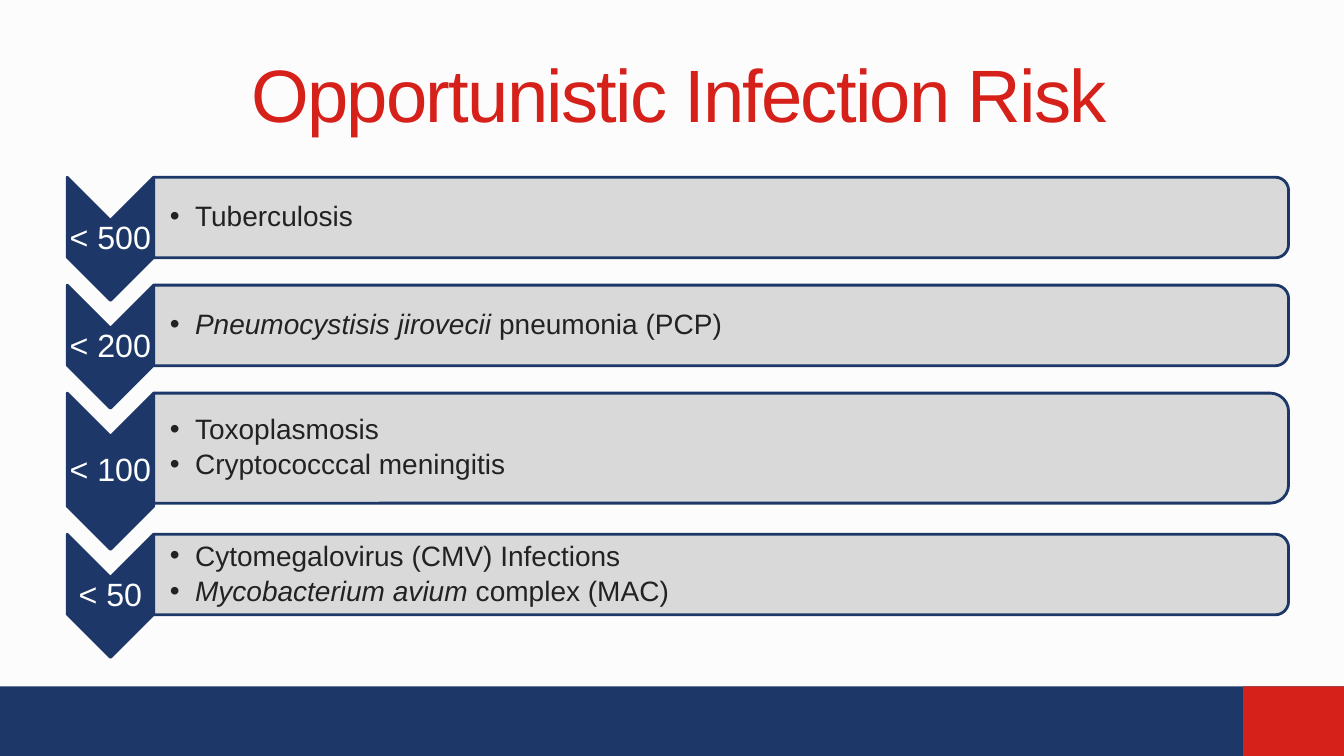
from lxml.etree import SubElement
from pptx import Presentation
from pptx.dml.color import RGBColor
from pptx.enum.shapes import MSO_SHAPE
from pptx.enum.text import MSO_ANCHOR, PP_ALIGN
from pptx.oxml.ns import qn
from pptx.util import Emu, Inches, Pt

COLORS = {
    "page": "FCFCFC",
    "navy": "1C3768",
    "red": "D6201A",
    "gray": "D6D6D6",
    "ink": "222222",
    "white": "FFFFFF",
}
COLUMNS, ROWS = 160, 90

# CD4 threshold, infections (*italic*), bar rows, chevron rows
RISKS = [
    ("< 500", ["Tuberculosis"], 9.6, 14.65),
    ("< 200", ["*Pneumocystisis jirovecii *pneumonia (PCP)"], 9.6, 14.65),
    ("< 100", ["Toxoplasmosis", "Cryptococccal meningitis"], 13.1, 18.6),
    ("< 50", ["Cytomegalovirus (CMV) Infections",
              "*Mycobacterium avium *complex (MAC)"], 9.6, 14.65),
]
LIST_TOP, OVERLAP = 21.1, 1.8
CHEVRON_LEFT, CHEVRON_WIDTH = 8, 10.3
BAR_LEFT, BAR_WIDTH = CHEVRON_LEFT + CHEVRON_WIDTH, 135.1


def rgb(name):
    return RGBColor.from_string(COLORS[name])


class Deck:
    """Holds the style and the slide; lengths are grid columns and rows."""

    font = "Arial"

    def __init__(self):
        self.file = Presentation()
        self.file.slide_width = Inches(13.33)
        self.file.slide_height = Inches(7.5)
        self.slide = self.file.slides.add_slide(self.file.slide_layouts[6])
        background = self.slide.background.fill
        background.solid()
        background.fore_color.rgb = rgb("page")

    def place(self, left, top, width, height):
        column = self.file.slide_width / COLUMNS
        row = self.file.slide_height / ROWS
        return [Emu(round(n)) for n in
                (left * column, top * row, width * column, height * row)]

    def block(self, preset, left, top, width, height, fill, line=None, opacity=None):
        return self.draw(preset, self.place(left, top, width, height), fill, line, opacity)

    def turned(self, preset, left, top, width, height, fill, line=None, opacity=None):
        """Draw a preset turned a quarter clockwise that covers the given area."""
        x, y, w, h = self.place(left, top, width, height)
        frame = [x + (w - h) // 2, y + (h - w) // 2, h, w]
        shape = self.draw(preset, frame, fill, line, opacity)
        shape.rotation = 90
        return shape

    def draw(self, preset, frame, fill, line, opacity):
        shape = self.slide.shapes.add_shape(preset, *frame)
        shape.shadow.inherit = False
        shape.fill.solid()
        shape.fill.fore_color.rgb = rgb(fill)
        if opacity:
            color = shape.fill._xPr.find(qn("a:solidFill"))[0]
            SubElement(color, qn("a:alpha"), val=str(opacity * 1000))
        if line:
            shape.line.color.rgb = rgb(line)
            shape.line.width = Pt(2)
        else:
            shape.line.fill.background()
        return shape

    def text(self, lines, left, top, width, height, *, size, color,
             align=PP_ALIGN.LEFT, insets=(0.1, 0.05, 0.1, 0.05),
             leading=0.9, after=0, bullet=False, tracking=0):
        """Add lines of text; parts between asterisks are italic."""
        box = self.slide.shapes.add_textbox(*self.place(left, top, width, height))
        frame = box.text_frame
        frame.word_wrap = True
        frame.vertical_anchor = MSO_ANCHOR.MIDDLE
        (frame.margin_left, frame.margin_top,
         frame.margin_right, frame.margin_bottom) = map(Inches, insets)
        for index, line in enumerate(lines):
            paragraph = frame.paragraphs[0] if index == 0 else frame.add_paragraph()
            paragraph.alignment = align
            paragraph.line_spacing = leading
            paragraph.space_after = Pt(after)
            if bullet:
                props = paragraph._p.get_or_add_pPr()
                props.set("marL", str(Inches(0.25)))
                props.set("indent", str(-Inches(0.25)))
                SubElement(props, qn("a:buFont"), typeface=self.font)
                SubElement(props, qn("a:buChar"), char="•")
            for part, words in enumerate(line.split("*")):
                if not words:
                    continue
                run = paragraph.add_run()
                run.text = words
                run.font.name = self.font
                run.font.size = Pt(size)
                run.font.color.rgb = rgb(color)
                run.font.italic = part % 2 == 1
                if tracking:
                    run.font._element.set("spc", str(round(tracking * 100)))


def main():
    deck = Deck()
    deck.block(MSO_SHAPE.RECTANGLE, 0, 81.7, COLUMNS, 8.3, "navy")
    deck.block(MSO_SHAPE.RECTANGLE, 148, 81.7, 12, 8.3, "red")
    deck.text(["Opportunistic Infection Risk"], 8, 3.6, 145.6, 15, size=53,
              color="red", align=PP_ALIGN.CENTER, leading=1, tracking=-1.3)

    top = LIST_TOP
    for threshold, infections, bar, chevron in RISKS:
        deck.turned(MSO_SHAPE.CHEVRON, CHEVRON_LEFT, top, CHEVRON_WIDTH, chevron,
                    "navy", line="navy")
        deck.text([threshold], CHEVRON_LEFT, top + CHEVRON_WIDTH / 2, CHEVRON_WIDTH,
                  chevron - CHEVRON_WIDTH, size=23, color="white",
                  align=PP_ALIGN.CENTER, insets=(0.02,) * 4)
        deck.turned(MSO_SHAPE.ROUND_2_SAME_RECTANGLE, BAR_LEFT, top, BAR_WIDTH, bar,
                    "gray", line="navy", opacity=90)
        deck.text(infections, BAR_LEFT, top + 0.5, BAR_WIDTH - 0.4, bar - 1, size=20,
                  color="ink", insets=(0.16, 0.01, 0.01, 0.01), after=3.5, bullet=True)
        top += chevron - OVERLAP

    deck.file.save("out.pptx")


if __name__ == "__main__":
    main()
